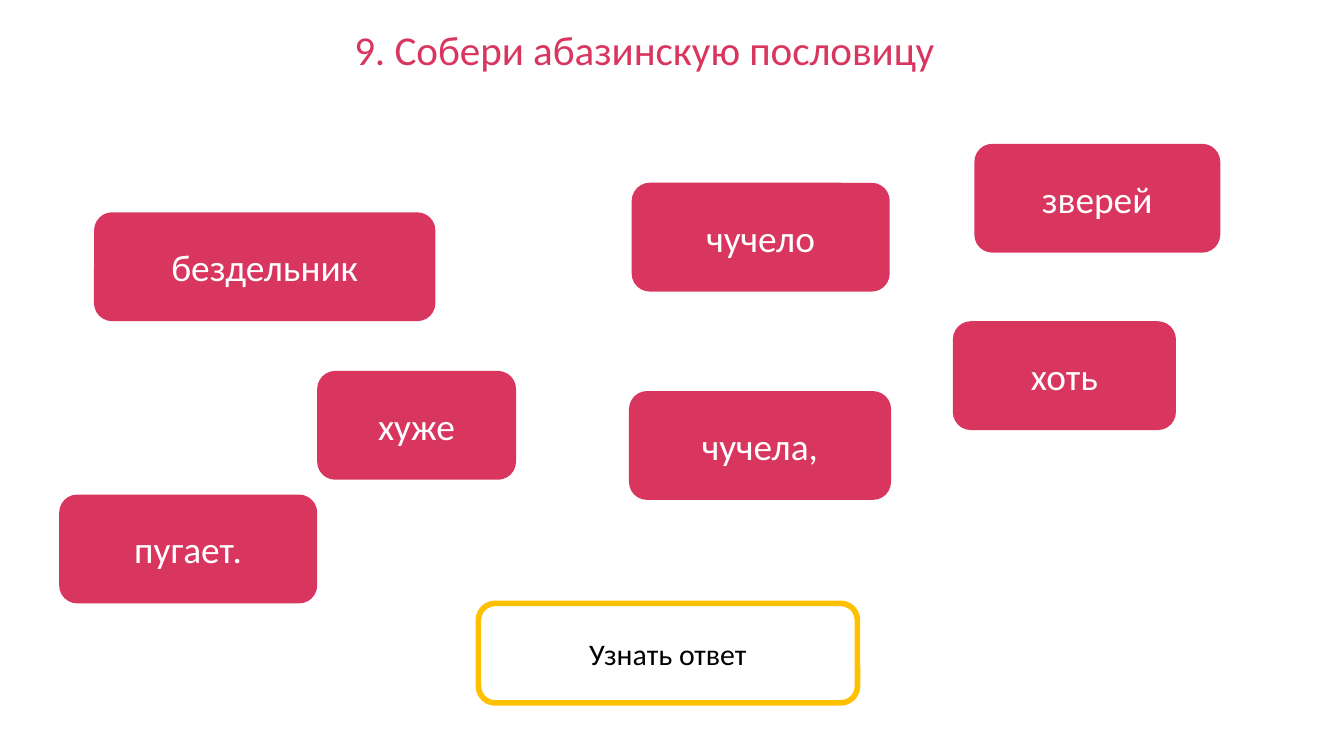
"""Build a slide with scattered proverb words and an answer button."""
import pptx
import pptx.util
import pptx.dml.color
import pptx.enum.shapes
import pptx.enum.text

SLIDE_SIZE = (2000, 1125)
TITLE = "9. Собери абазинскую пословицу"
TITLE_BOX = (334, 26, 1250, 94)
WORDS = [
    ("хоть", 1418, 478, 332),
    ("чучела,", 936, 582, 390),
    ("хуже", 472, 552, 296),
    ("бездельник", 140, 316, 508),
    ("чучело", 940, 272, 384),
    ("зверей", 1450, 214, 366),
    ("пугает.", 88, 736, 384),
]
WORD_HEIGHT = 162
BUTTON = "Узнать ответ"
BUTTON_BOX = (712, 898, 564, 148)
COLORS = {"rose": "D9365F", "gold": "FFC000", "white": "FFFFFF", "black": "000000"}
PX = 4572


def px(length):
    return pptx.util.Emu(length * PX)


def color(name):
    return pptx.dml.color.RGBColor.from_string(COLORS[name])


def write(shape, text, *, size, ink, inset=(20, 10), anchor="MIDDLE"):
    frame = shape.text_frame
    frame.word_wrap = True
    frame.auto_size = pptx.enum.text.MSO_AUTO_SIZE.SHAPE_TO_FIT_TEXT
    frame.vertical_anchor = pptx.enum.text.MSO_ANCHOR[anchor]
    frame.margin_left = frame.margin_right = px(inset[0])
    frame.margin_top = frame.margin_bottom = px(inset[1])
    frame.text = text
    paragraph = frame.paragraphs[0]
    paragraph.alignment = pptx.enum.text.PP_ALIGN.CENTER
    font = paragraph.runs[0].font
    font.name = "Calibri"
    font.size = pptx.util.Pt(size)
    font.color.rgb = color(ink)


def add_card(slide, box, text, *, size, ink, fill=None, line=None):
    kind = pptx.enum.shapes.MSO_SHAPE.ROUNDED_RECTANGLE
    shape = slide.shapes.add_shape(kind, *map(px, box))
    shape.shadow.inherit = False
    if fill:
        shape.fill.solid()
        shape.fill.fore_color.rgb = color(fill)
    else:
        shape.fill.background()
    if line:
        shape.line.color.rgb = color(line)
        shape.line.width = pptx.util.Pt(3)
    else:
        shape.line.fill.background()
    write(shape, text, size=size, ink=ink, inset=(78, 40))


def main():
    presentation = pptx.Presentation()
    presentation.slide_width, presentation.slide_height = map(px, SLIDE_SIZE)
    slide = presentation.slides.add_slide(presentation.slide_layouts[5])
    title = slide.shapes.title
    title.left, title.top, title.width, title.height = map(px, TITLE_BOX)
    write(title, TITLE, size=22, ink="rose", anchor="TOP")
    for text, left, top, width in WORDS:
        add_card(slide, (left, top, width, WORD_HEIGHT), text,
                 size=20, ink="white", fill="rose")
    add_card(slide, BUTTON_BOX, BUTTON, size=16, ink="black", line="gold")
    presentation.save("out.pptx")


if __name__ == "__main__":
    main()
